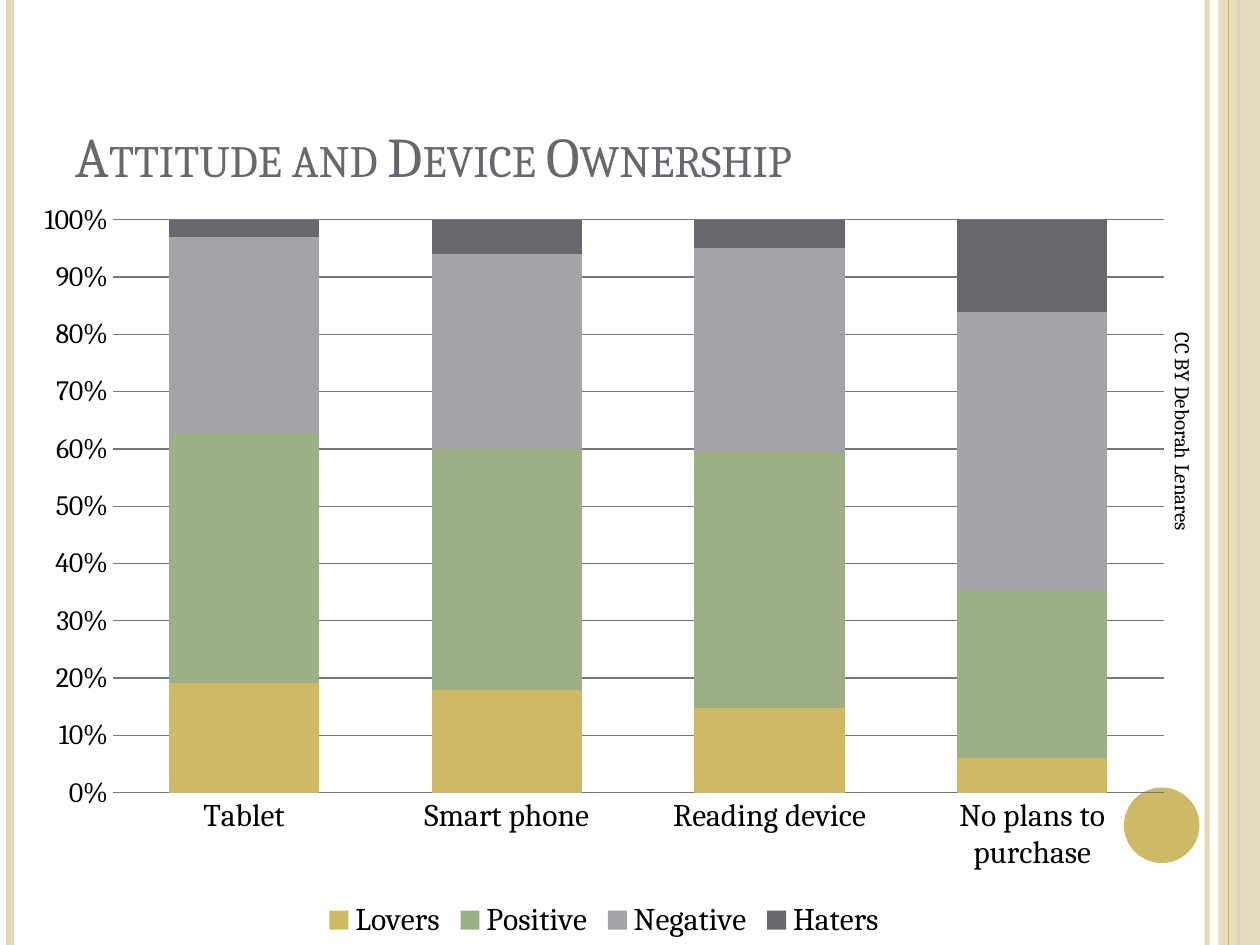
from dataclasses import dataclass

from lxml.etree import SubElement
from pptx import Presentation
from pptx.chart.data import CategoryChartData
from pptx.dml.color import RGBColor
from pptx.enum.chart import XL_CHART_TYPE, XL_LEGEND_POSITION, XL_TICK_MARK
from pptx.enum.shapes import MSO_CONNECTOR, MSO_SHAPE
from pptx.enum.text import MSO_ANCHOR, PP_ALIGN
from pptx.oxml.ns import qn
from pptx.util import Inches, Pt


@dataclass(frozen=True)
class Theme:
    """Colours, font and type sizes of the deck."""
    font: str = "Cambria"
    gold: str = "CEB966"
    sand: str = "E3D9B8"
    green: str = "9CB084"
    silver: str = "A5A3A8"
    slate: str = "69676D"
    grid: str = "767676"
    ink: str = "000000"
    title_size: int = 32
    label_size: int = 18
    scale_size: int = 16
    credit_size: int = 12
    chart_size: int = 10


THEME = Theme()
PAGE_WIDTH, PAGE_HEIGHT = 10, 7.5
CATEGORIES = ["Tablet", "Smart phone", "Reading device", "No plans to purchase"]
SERIES = [
    ("Lovers", THEME.gold, (19, 18, 15, 6)),
    ("Positive", THEME.green, (43, 42, 45, 29)),
    ("Negative", THEME.silver, (34, 34, 36, 48)),
    ("Haters", THEME.slate, (3, 6, 5, 16)),
]


def apply_format(target, values):
    """Set each attribute of the target from a dict."""
    for name, value in values.items():
        setattr(target, name, value)


def set_font(font, size, color):
    """Give a font the theme face, a size and a colour."""
    apply_format(font, {"name": THEME.font, "size": Pt(size)})
    font.color.rgb = RGBColor.from_string(color)


def set_opacity(element, percent):
    """Make the solid colour within an element partly transparent."""
    color = next(element.iter(qn("a:srgbClr")))
    SubElement(color, qn("a:alpha")).set("val", str(percent * 1000))


def add_rule(page, left, color, weight, opacity=100):
    """Draw one full-height vertical line."""
    rule = page.shapes.add_connector(
        MSO_CONNECTOR.STRAIGHT, Inches(left), 0, Inches(left), Inches(PAGE_HEIGHT))
    rule.line.color.rgb = RGBColor.from_string(color)
    rule.line.width = Pt(weight)
    properties = rule.element.spPr
    SubElement(properties, qn("a:effectLst"))
    if opacity < 100:
        set_opacity(properties, opacity)


def add_solid(page, kind, box, color, opacity=100):
    """Draw one filled shape without an outline."""
    shape = page.shapes.add_shape(kind, *map(Inches, box))
    shape.shadow.inherit = False
    shape.fill.solid()
    shape.fill.fore_color.rgb = RGBColor.from_string(color)
    shape.line.fill.background()
    if opacity < 100:
        set_opacity(shape.element.spPr, opacity)


def add_borders(page, box):
    """Draw the side lines, the right band and the disc."""
    left, top, width, height = box
    right = left + width
    add_rule(page, right - 0.42, THEME.sand, 3, 93)
    add_rule(page, left + 0.08, THEME.sand, 4.5)
    add_rule(page, right - 0.17, THEME.gold, 1.5)
    add_solid(page, MSO_SHAPE.RECTANGLE, (right - 0.33, top, 0.33, height), THEME.sand, 87)
    add_rule(page, right - 0.25, THEME.gold, 0.75)
    add_solid(page, MSO_SHAPE.OVAL, (right - 1.08, top + height - 1.25, 0.6, 0.6), THEME.gold)


def add_attitude_chart(page, box):
    """Place the stacked percentage columns with their legend."""
    data = CategoryChartData()
    data.categories = CATEGORIES
    for name, _, values in SERIES:
        data.add_series(name, values)
    chart = page.shapes.add_chart(
        XL_CHART_TYPE.COLUMN_STACKED_100, *map(Inches, box), data).chart
    set_font(chart.font, THEME.chart_size, THEME.ink)
    apply_format(chart, {"has_title": False, "has_legend": True})
    apply_format(chart.legend, {
        "position": XL_LEGEND_POSITION.BOTTOM, "include_in_layout": False})
    set_font(chart.legend.font, THEME.label_size, THEME.ink)

    plot = chart.plots[0]
    apply_format(plot, {"gap_width": 75, "overlap": 100, "vary_by_categories": False})
    for series, (_, color, _) in zip(plot.series, SERIES):
        series.format.fill.solid()
        series.format.fill.fore_color.rgb = RGBColor.from_string(color)

    scale = chart.value_axis
    for axis, size in ((chart.category_axis, THEME.label_size), (scale, THEME.scale_size)):
        apply_format(axis, {
            "major_tick_mark": XL_TICK_MARK.NONE, "minor_tick_mark": XL_TICK_MARK.NONE})
        set_font(axis.tick_labels.font, size, THEME.ink)
    apply_format(scale, {
        "has_major_gridlines": True, "minimum_scale": 0, "maximum_scale": 1,
        "major_unit": 0.1})
    apply_format(scale.tick_labels, {"number_format": "0%", "number_format_is_linked": False})
    scale.format.line.fill.background()
    for line in (scale.major_gridlines.format.line, chart.category_axis.format.line):
        line.color.rgb = RGBColor.from_string(THEME.grid)
        line.width = Pt(0.75)


def fill_text(shape, box, text, size, color, anchor):
    """Place a text shape and write its single line."""
    for name, value in zip(("left", "top", "width", "height"), box):
        setattr(shape, name, Inches(value))
    frame = shape.text_frame
    apply_format(frame, {"word_wrap": True, "vertical_anchor": anchor})
    para = frame.paragraphs[0]
    para.alignment = PP_ALIGN.LEFT
    span = para.add_run()
    span.text = text
    set_font(span.font, size, color)
    return span


def add_title(page, box):
    """Write the title in small capitals, in front of the chart."""
    title = page.shapes.title
    span = fill_text(title, box, "Attitude and Device Ownership",
                     THEME.title_size, THEME.slate, MSO_ANCHOR.BOTTOM)
    span.font._element.set("cap", "small")
    title.element.getparent().append(title.element)


def add_credit(page, box):
    """Write the licence line, turned to read downwards."""
    credit = page.shapes.add_textbox(*map(Inches, box))
    fill_text(credit, box, "CC BY Deborah Lenares",
              THEME.credit_size, THEME.ink, MSO_ANCHOR.MIDDLE)
    credit.rotation = 90


def main():
    """Build and save the deck."""
    deck = Presentation()
    apply_format(deck, {
        "slide_width": Inches(PAGE_WIDTH), "slide_height": Inches(PAGE_HEIGHT)})
    page = deck.slides.add_slide(deck.slide_layouts.get_by_name("Title Only"))
    add_borders(page, (0, 0, PAGE_WIDTH, PAGE_HEIGHT))
    add_attitude_chart(page, (0.17, 1.5, 9.25, 6))
    add_title(page, (0.5, 0.3, 8.17, 1.25))
    add_credit(page, (7.64, 4.09, 3.5, 0.4))
    deck.save("out.pptx")


if __name__ == "__main__":
    main()
